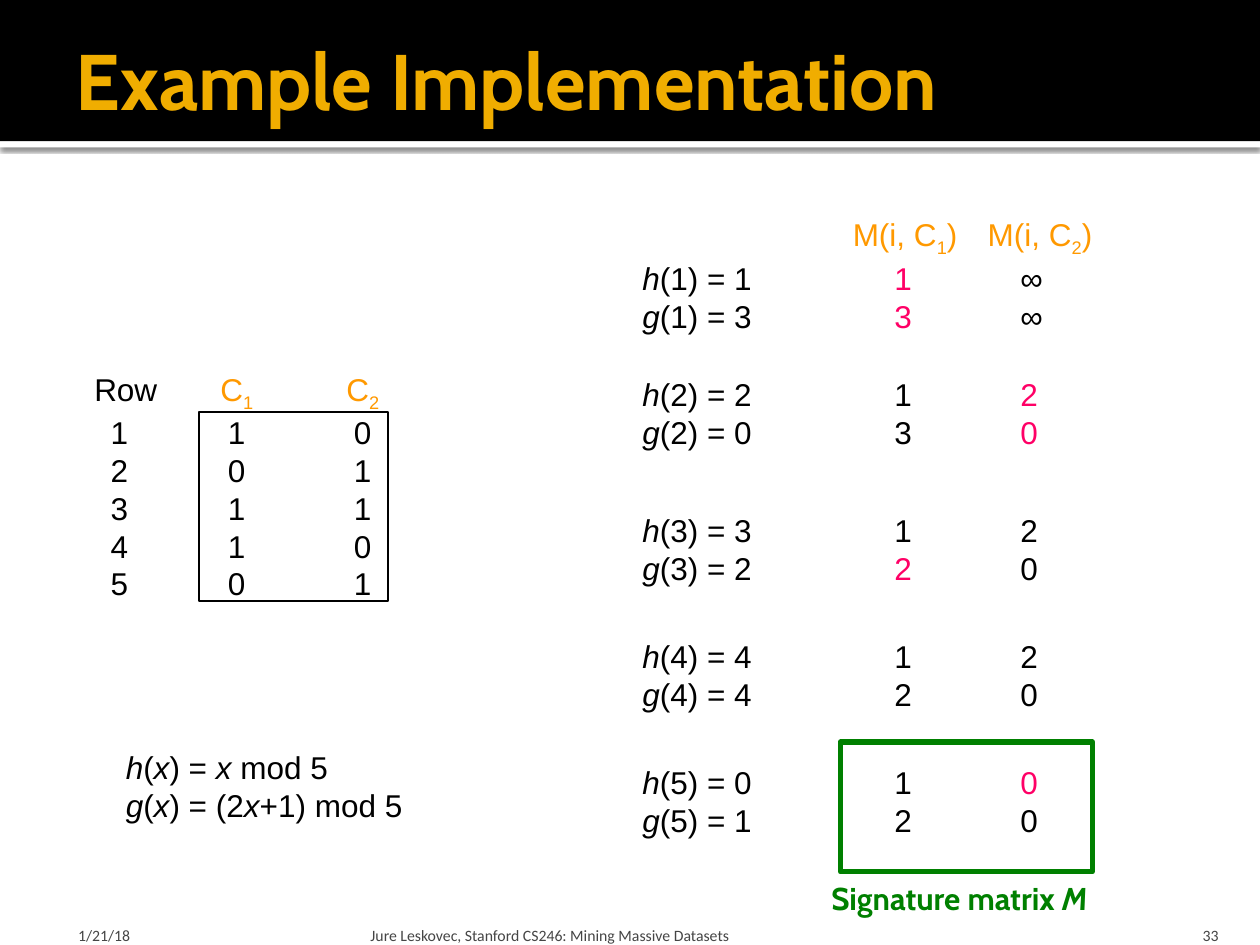
from lxml import etree
from pptx import Presentation
from pptx import util as u
from pptx.dml.color import RGBColor
from pptx.enum import shapes, text
from pptx.oxml.ns import qn

THEME = {
    "title": "F0AD00", "band": "000000", "paper": "FFFFFF", "ink": "000000",
    "head": "FF9900", "changed": "FF0066", "result": "008000", "footer": "454545",
    "title_size": 45, "body_size": 18, "footer_size": 9,
    "title_font": "Cabin", "body_font": "Arial", "footer_font": "Calibri",
}

prs = Presentation()
prs.slide_width, prs.slide_height = u.Inches(10), u.Inches(7.5)
slide = prs.slides.add_slide(prs.slide_layouts[5])


def add_rect(left, top, width, height, fill=None, line=None, weight=0.75):
    rect = slide.shapes.add_shape(shapes.MSO_SHAPE.RECTANGLE, *map(u.Inches, (left, top, width, height)))
    rect.shadow.inherit = False
    if fill:
        rect.fill.solid()
        rect.fill.fore_color.rgb = RGBColor.from_string(THEME[fill])
    else:
        rect.fill.background()
    if line:
        rect.line.color.rgb = RGBColor.from_string(THEME[line])
        rect.line.width = u.Pt(weight)
    else:
        rect.line.fill.background()
    return rect


def add_lines(left, top, width, height, lines, color="ink", kind="body", bold=None, tabs=()):
    """Each line is a list of (text, style): i italic, s subscript, h heading, c changed value.
    Each tab is (position in inches, alignment)."""
    box = slide.shapes.add_textbox(*map(u.Inches, (left, top, width, height)))
    frame = box.text_frame
    frame.word_wrap = True
    for number, line in enumerate(lines):
        paragraph = frame.paragraphs[0] if number == 0 else frame.add_paragraph()
        if tabs:
            stops = etree.SubElement(paragraph._p.get_or_add_pPr(), qn("a:tabLst"))
            for position, align in tabs:
                etree.SubElement(stops, qn("a:tab"), pos=str(u.Inches(position)), algn=align)
        for wording, style in line:
            run = paragraph.add_run()
            run.text = wording
            font = run.font
            font.name, font.size = THEME[kind + "_font"], u.Pt(THEME[kind + "_size"])
            font.bold, font.italic = bold, "i" in style
            shade = "head" if "h" in style else "changed" if "c" in style else color
            font.color.rgb = RGBColor.from_string(THEME[shade])
            if "s" in style:
                font._element.set("baseline", "-25000")
    return frame


# Header bands, placed behind the title
stripe = add_rect(0, 1.12, 10, 0.05, fill="paper")
effects = stripe._element.spPr.find(qn("a:effectLst"))
shadow = etree.SubElement(effects, qn("a:outerShdw"), blurRad=str(u.Pt(2.5)), dist=str(u.Pt(0.8)),
                          dir="5400000", algn="tl", rotWithShape="0")
shade = etree.SubElement(shadow, qn("a:srgbClr"), val=THEME["band"])
etree.SubElement(shade, qn("a:alpha"), val="60000")
header = add_rect(0, 0, 10, 1.12, fill="band")
for depth, band in enumerate((stripe, header)):
    slide.shapes._spTree.insert(2 + depth, band._element)

# Title
title = slide.shapes.title
title.left, title.top, title.width, title.height = map(u.Inches, (0.5, 0.17, 9, 0.92))
title.text_frame.text = "Example Implementation"
title.text_frame.auto_size = text.MSO_AUTO_SIZE.NONE
title.text_frame.vertical_anchor = text.MSO_ANCHOR.MIDDLE
title.text_frame.margin_right = u.Inches(0.05)
title_line = title.text_frame.paragraphs[0]
title_line.alignment = text.PP_ALIGN.LEFT
title_font = title_line.runs[0].font
title_font.name, title_font.size, title_font.bold = THEME["title_font"], u.Pt(THEME["title_size"]), True
title_font.color.rgb = RGBColor.from_string(THEME["title"])

# Input matrix: headings, then rows centred under them
add_lines(0.65, 2.89, 2.6, 0.4,
          [[("Row\t", ""), ("C", "h"), ("1", "hs"), ("\tC", "h"), ("2", "hs")]],
          tabs=[(1, "l"), (2, "l")])
columns = [(1, 0), (0, 1), (1, 1), (1, 0), (0, 1)]
add_lines(0.65, 3.23, 2.6, 1.6,
          [[(f"\t{row}\t{c1}\t{c2}", "")] for row, (c1, c2) in enumerate(columns, 1)],
          tabs=[(0.2, "ctr"), (1.13, "ctr"), (2.13, "ctr")])
add_rect(1.58, 3.27, 1.5, 1.5, line="ink")

# Hash functions
add_lines(0.9, 5.89, 2.6, 0.71, [
    [("h", "i"), ("(", ""), ("x", "i"), (") = ", ""), ("x", "i"), (" mod 5", "")],
    [("g", "i"), ("(", ""), ("x", "i"), (") = (2", ""), ("x", "i"), ("+1) mod 5", "")],
])

# Signature updates per row; each value is followed by "c" where it has changed
add_lines(6.67, 1.66, 2.3, 0.4,
          [[("M(i, C", "h"), ("1", "hs"), (")\tM(i, C", "h"), ("2", "hs"), (")", "h")]],
          tabs=[(1.07, "l")])
updates = [
    (2.01, ("1", "1c", "∞"), ("3", "3c", "∞")),
    (2.93, ("2", "1", "2c"), ("0", "3", "0c")),
    (4.01, ("3", "1", "2"), ("2", "2c", "0")),
    (5.01, ("4", "1", "2"), ("4", "2", "0")),
    (6.01, ("0", "1", "0c"), ("1", "2", "0")),
]
for row, (top, *hashes) in enumerate(updates, 1):
    lines = []
    for name, (value, *signature) in zip("hg", hashes):
        line = [(name, "i"), (f"({row}) = {value}", "")]
        line += [("\t" + entry[0], entry[1:]) for entry in signature]
        lines.append(line)
    add_lines(5, top, 3.6, 0.71, lines, tabs=[(2, "l"), (3, "l")])

# Final signature matrix
add_lines(6.5, 6.93, 2.5, 0.4, [[("Signature matrix ", ""), ("M", "i")]],
          color="result", kind="title", bold=True)
for run in slide.shapes[-1].text_frame.paragraphs[0].runs:
    run.font.size = u.Pt(THEME["body_size"])
add_rect(6.67, 5.89, 2, 1.03, line="result", weight=3)

# Footer
footers = [
    (0.5, 2.33, "1/21/18", 0.12, 0.05, text.PP_ALIGN.LEFT),
    (2.89, 6.02, "Jure Leskovec, Stanford CS246: Mining Massive Datasets", 0.05, 0.05, text.PP_ALIGN.LEFT),
    (8.97, 0.8, "33", 0.1, 0.1, text.PP_ALIGN.RIGHT),
]
for left, width, wording, inset_left, inset_right, align in footers:
    footer = add_lines(left, 7.2, width, 0.3, [[(wording, "")]], color="footer", kind="footer")
    footer.margin_left, footer.margin_right = u.Inches(inset_left), u.Inches(inset_right)
    footer.margin_bottom = 0
    footer.vertical_anchor = text.MSO_ANCHOR.BOTTOM
    footer.paragraphs[0].alignment = align

prs.save("out.pptx")
